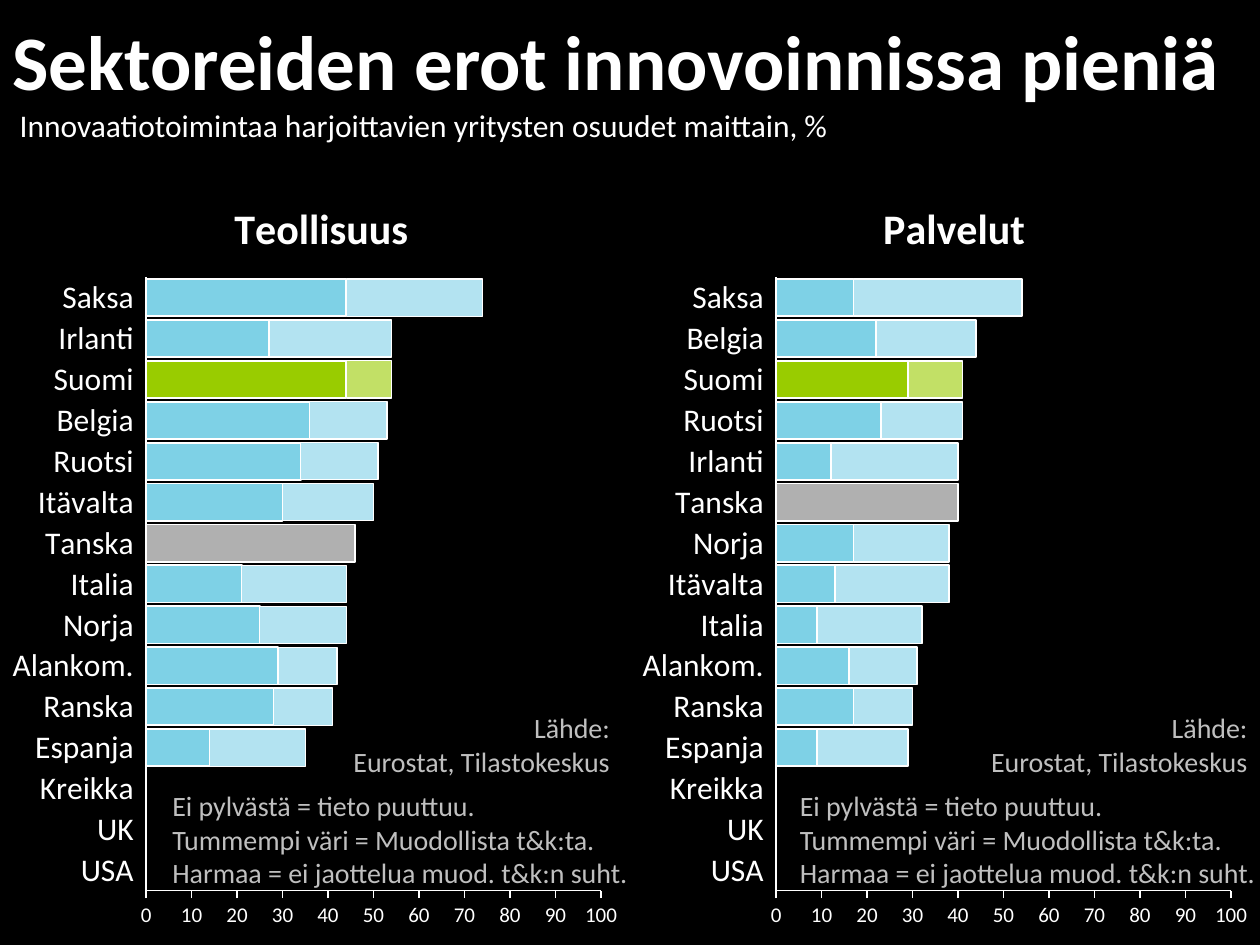
from dataclasses import dataclass

from lxml import etree
from pptx import Presentation
from pptx.chart.data import CategoryChartData
from pptx.dml.color import RGBColor
from pptx.enum.chart import XL_CHART_TYPE as ChartType
from pptx.enum.chart import XL_TICK_LABEL_POSITION as LabelPosition
from pptx.enum.chart import XL_TICK_MARK as TickMark
from pptx.enum.text import MSO_AUTO_SIZE as AutoSize
from pptx.enum.text import PP_ALIGN as Align
from pptx.oxml.ns import qn
from pptx.util import Inches, Pt


@dataclass(frozen=True)
class Theme:
    font: str = "Calibri"
    background: str = "000000"
    text: str = "FFFFFF"
    muted: str = "BFBFBF"
    bars: tuple[str, str] = ("7ED1E6", "B3E3F1")
    finland: tuple[str, str] = ("99CC00", "C2E066")
    undivided: str = "B0B0B0"
    headline_size: float = 44
    chart_title_size: float = 24
    body_size: float = 18
    note_size: float = 16
    axis_size: float = 12


@dataclass(frozen=True)
class Country:
    name: str
    formal: float | None = None
    other: float | None = None


@dataclass(frozen=True)
class Panel:
    title: str
    left: float
    title_x: float
    note_left: float
    source_left: float
    other_line: float
    countries: list[Country]


THEME = Theme()
NO_DATA = [Country("USA"), Country("UK"), Country("Kreikka")]
PANELS = [
    Panel("Teollisuus", 0, 0.36, 1.27, 2.68, 0.75, NO_DATA + [
        Country("Espanja", 14, 21), Country("Ranska", 28, 13),
        Country("Alankom.", 29, 13), Country("Norja", 25, 19),
        Country("Italia", 21, 23), Country("Tanska", 46, 0),
        Country("Itävalta", 30, 20), Country("Ruotsi", 34, 17),
        Country("Belgia", 36, 17), Country("Suomi", 44, 10),
        Country("Irlanti", 27, 27), Country("Saksa", 44, 30)]),
    Panel("Palvelut", 5, 0.39, 6.25, 7.74, 1, NO_DATA + [
        Country("Espanja", 9, 20), Country("Ranska", 17, 13),
        Country("Alankom.", 16, 15), Country("Italia", 9, 23),
        Country("Itävalta", 13, 25), Country("Norja", 17, 21),
        Country("Tanska", 40, 0), Country("Irlanti", 12, 28),
        Country("Ruotsi", 23, 18), Country("Suomi", 29, 12),
        Country("Belgia", 22, 22), Country("Saksa", 17, 37)]),
]
NOTES = ["Ei pylvästä = tieto puuttuu.",
         "Tummempi väri = Muodollista t&k:ta.",
         "Harmaa = ei jaottelua muod. t&k:n suht."]
SOURCE = ["Lähde:", "Eurostat, Tilastokeskus"]


def rgb(color: str) -> RGBColor:
    return RGBColor.from_string(color)


def style_font(font, size: float, color: str, bold: bool = False) -> None:
    font.name, font.size, font.bold = THEME.font, Pt(size), bold
    font.color.rgb = rgb(color)


def style_line(line, width: float) -> None:
    line.color.rgb = rgb(THEME.text)
    line.width = Pt(width)


def add_text(slide, box: tuple[float, float, float, float], lines: list[str],
             align: Align = Align.LEFT, wrap: bool = False):
    """Add a text box of muted notes, one paragraph a line."""
    shape = slide.shapes.add_textbox(*map(Inches, box))
    frame = shape.text_frame
    frame.word_wrap = wrap
    frame.auto_size = AutoSize.SHAPE_TO_FIT_TEXT
    frame.text = "\n".join(lines)
    for paragraph in frame.paragraphs:
        paragraph.alignment = align
        style_font(paragraph.font, THEME.note_size, THEME.muted)
    return frame


def set_layout(parent, before: str, **values: float | str) -> None:
    """Give a chart part a manual layout, placed ahead of the named child."""
    for old in parent.findall(qn("c:layout")):
        parent.remove(old)
    layout = etree.Element(qn("c:layout"))
    manual = etree.SubElement(layout, qn("c:manualLayout"))
    for name, value in values.items():
        etree.SubElement(manual, qn(f"c:{name}")).set("val", str(value))
    parent.find(qn(before)).addprevious(layout)


def bar_color(country: Country, index: int) -> str:
    if country.name == "Suomi":
        return THEME.finland[index]
    if country.name == "Tanska" and index == 0:
        return THEME.undivided
    return THEME.bars[index]


def add_panel_chart(slide, panel: Panel) -> None:
    data = CategoryChartData()
    data.categories = [country.name for country in panel.countries]
    data.add_series("Series 1", [country.formal for country in panel.countries])
    data.add_series("Series 2", [country.other for country in panel.countries])
    chart = slide.shapes.add_chart(
        ChartType.BAR_STACKED, Inches(panel.left), Inches(1.28),
        Inches(5), Inches(6.22), data).chart
    style_font(chart.font, THEME.axis_size, THEME.text)
    chart.has_legend = False

    # Title and plot area
    chart.has_title = True
    title = chart.chart_title
    title.text_frame.text = panel.title
    style_font(title.text_frame.paragraphs[0].font,
               THEME.chart_title_size, THEME.text, bold=True)
    title.include_in_layout = False
    set_layout(title._element, "c:overlay", xMode="edge", yMode="edge",
               x=panel.title_x, y=0.04)
    plot = chart.plots[0]
    set_layout(plot._element.getparent(), "c:barChart", layoutTarget="inner",
               xMode="edge", yMode="edge", x=0.232, y=0.148, w=0.722, h=0.783)

    # Axes
    categories, values = chart.category_axis, chart.value_axis
    categories.tick_label_position = LabelPosition.LOW
    categories.major_tick_mark = TickMark.NONE
    style_font(categories.tick_labels.font, THEME.body_size, THEME.text)
    style_line(categories.format.line, 1)
    values.has_major_gridlines = False
    values.minimum_scale, values.maximum_scale, values.major_unit = 0, 100, 10
    values.major_tick_mark = TickMark.OUTSIDE
    values.tick_labels.number_format = "#,##0"
    values.tick_labels.number_format_is_linked = False
    style_line(values.format.line, 0.75)

    # Bars, with the exceptional countries coloured one by one
    plot.gap_width, plot.overlap, plot.vary_by_categories = 10, 100, False
    for index, (series, width) in enumerate(zip(plot.series, (1, panel.other_line))):
        targets = [(series, THEME.bars[index])]
        for position, country in enumerate(panel.countries):
            color = bar_color(country, index)
            if color != THEME.bars[index]:
                targets.append((series.points[position], color))
        for target, color in targets:
            target.format.fill.solid()
            target.format.fill.fore_color.rgb = rgb(color)
            style_line(target.format.line, width)


def add_heading(slide) -> None:
    frame = add_text(slide, (0.1, 0.11, 9.7, 1.04), [
        "Sektoreiden erot innovoinnissa pieniä",
        " Innovaatiotoimintaa harjoittavien yritysten osuudet maittain, %"], wrap=True)
    frame.margin_left = frame.margin_right = 0
    frame.margin_top = frame.margin_bottom = 0
    headline, subtitle = frame.paragraphs
    style_font(headline.font, THEME.headline_size, THEME.text, bold=True)
    style_font(subtitle.font, THEME.body_size, THEME.text)


def main() -> None:
    presentation = Presentation()
    presentation.slide_width, presentation.slide_height = Inches(10), Inches(7.5)
    slide = presentation.slides.add_slide(presentation.slide_layouts[6])
    slide.background.fill.solid()
    slide.background.fill.fore_color.rgb = rgb(THEME.background)

    for panel in PANELS:
        add_panel_chart(slide, panel)
    add_heading(slide)
    for panel in PANELS:
        add_text(slide, (panel.note_left, 6.21, 3.86, 0.91), NOTES)
        add_text(slide, (panel.source_left, 5.59, 2.26, 0.64), SOURCE, Align.RIGHT)
    presentation.save("out.pptx")


if __name__ == "__main__":
    main()
